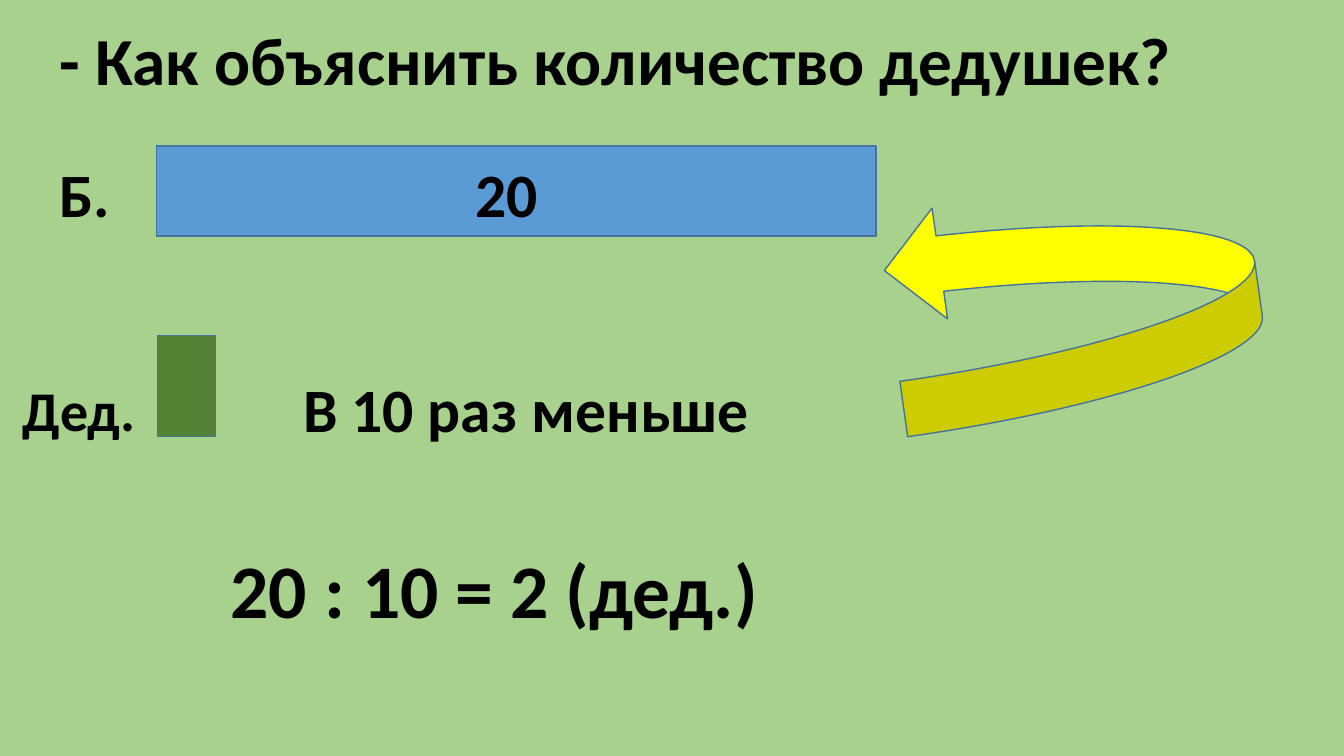
from dataclasses import dataclass

from pptx import Presentation
from pptx.dml.color import RGBColor
from pptx.enum.shapes import MSO_SHAPE
from pptx.enum.text import MSO_AUTO_SIZE
from pptx.util import Inches, Pt


@dataclass(frozen=True)
class Theme:
    font: str = "Calibri"
    background: str = "A9D18E"
    text: str = "000000"
    outline: str = "43739E"
    grandmothers: str = "5B9BD5"
    grandfathers: str = "548235"
    arrow: str = "FFFF00"
    small: int = 40
    body: int = 44
    title: int = 48
    answer: int = 54


THEME = Theme()


@dataclass(frozen=True)
class Box:
    left: float
    top: float
    width: float
    height: float

    def inner(self, left, top, width, height):
        """Return a box whose corner is offset from this one's corner."""
        return Box(self.left + left, self.top + top, width, height)

    def lengths(self):
        return [Inches(n) for n in (self.left, self.top, self.width, self.height)]


def add_text(page, box, text, size):
    frame = page.shapes.add_textbox(*box.lengths()).text_frame
    frame.word_wrap = True
    frame.auto_size = MSO_AUTO_SIZE.SHAPE_TO_FIT_TEXT
    span = frame.paragraphs[0].add_run()
    span.text = text
    span.font.name = THEME.font
    span.font.size = Pt(size)
    span.font.bold = True
    span.font.color.rgb = RGBColor.from_string(THEME.text)


def add_figure(page, kind, box, color):
    figure = page.shapes.add_shape(kind, *box.lengths())
    figure.shadow.inherit = False
    figure.fill.solid()
    figure.fill.fore_color.rgb = RGBColor.from_string(color)
    figure.line.color.rgb = RGBColor.from_string(THEME.outline)
    figure.line.width = Pt(1)
    return figure


def add_comparison_arrow(page, box):
    """Draw the curved arrow from the lower row back to the upper one."""
    arrow = add_figure(page, MSO_SHAPE.CURVED_LEFT_ARROW, box, THEME.arrow)
    arrow.rotation = 352
    arrow._element.spPr.xfrm.set("flipV", "1")


def add_grandmothers(page, box):
    bar = box.inner(1.06, 0, box.width - 1.06, box.height)
    add_figure(page, MSO_SHAPE.RECTANGLE, bar, THEME.grandmothers)
    add_text(page, box.inner(0, 0.05, 1.06, 0.84), "Б.", THEME.body)
    add_text(page, bar.inner(3.07, 0.05, 1, 0.84), "20", THEME.body)


def add_grandfathers(page, box):
    add_text(page, box.inner(0, 0.35, 1.56, 0.77), "Дед.", THEME.small)
    add_text(page, box.inner(2.78, 0.3, 5.33, 0.84), "В 10 раз меньше", THEME.body)
    bar = box.inner(1.43, 0, 0.58, box.height)
    add_figure(page, MSO_SHAPE.RECTANGLE, bar, THEME.grandfathers)


def build_problem(page):
    background = page.background.fill
    background.solid()
    background.fore_color.rgb = RGBColor.from_string(THEME.background)
    add_comparison_arrow(page, Box(8.83, 1.87, 3.65, 2.22))
    add_text(page, Box(0.49, 0.13, 12.36, 0.91),
             "- Как объяснить количество дедушек?", THEME.title)
    add_grandmothers(page, Box(0.49, 1.45, 8.2, 0.89))
    add_grandfathers(page, Box(0.13, 3.33, 8.11, 1))
    add_text(page, Box(2.19, 5.34, 6.5, 1.01), "20 : 10 = 2 (дед.)", THEME.answer)


def main():
    deck = Presentation()
    deck.slide_width, deck.slide_height = Inches(13.33), Inches(7.5)
    build_problem(deck.slides.add_slide(deck.slide_layouts[6]))
    deck.save("out.pptx")


if __name__ == "__main__":
    main()
